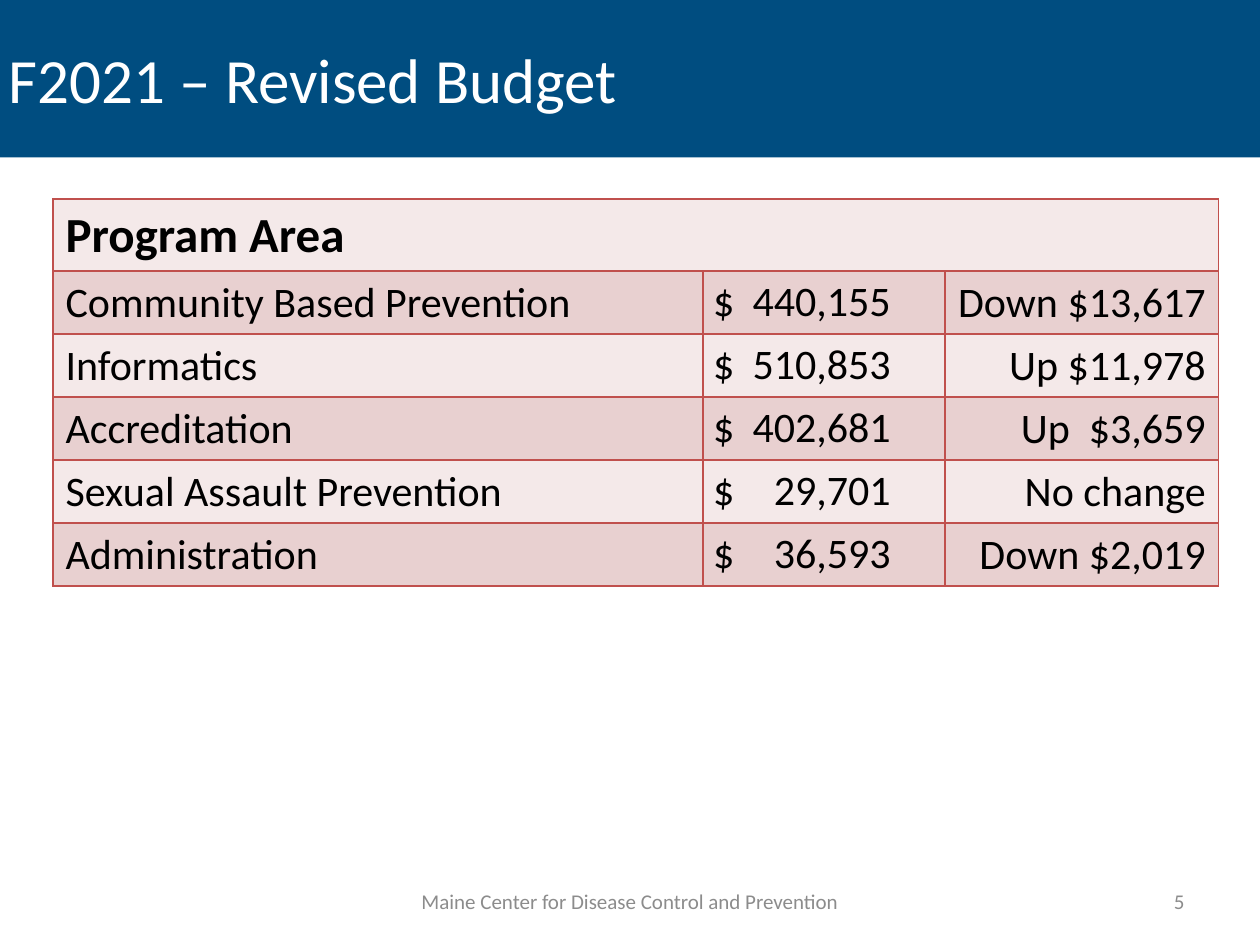
import pptx
import pptx.util
import pptx.dml.color
import pptx.enum.text
import pptx.oxml
import pptx.oxml.ns
from lxml import etree

Inches = pptx.util.Inches
Pt = pptx.util.Pt
ALIGN = pptx.enum.text.PP_ALIGN
MIDDLE = pptx.enum.text.MSO_ANCHOR.MIDDLE
TOP = pptx.enum.text.MSO_ANCHOR.TOP

COLUMN_WIDTHS = (5.16, 1.92, 2.17)
HEADER_HEIGHT = 0.57
ROW_HEIGHT = 0.5
BAND_FILLS = ("F4E9E9", "E8D0D0")
BUDGET = (
    ("Community Based Prevention", "440,155", "Down $13,617"),
    ("Informatics", "510,853", "Up $11,978"),
    ("Accreditation", "402,681", "Up  $3,659"),
    ("Sexual Assault Prevention", "29,701", "No change"),
    ("Administration", "36,593", "Down $2,019"),
)


def color(hex_value):
    return pptx.dml.color.RGBColor.from_string(hex_value)


def write(frame, text, size, hex_value, align=ALIGN.LEFT, bold=False):
    frame.text = text
    frame.word_wrap = True
    paragraph = frame.paragraphs[0]
    paragraph.alignment = align
    font = paragraph.font
    font.name = "Calibri"
    font.size = Pt(size)
    font.bold = bold
    font.color.rgb = color(hex_value)
    return paragraph


def add_title(slide, text):
    title = slide.shapes.title
    title.left, title.top = Inches(-0.03), Inches(0)
    title.width, title.height = Inches(10.03), Inches(1.25)
    title.fill.solid()
    title.fill.fore_color.rgb = color("004D80")
    write(title.text_frame, text, 36, "FFFFFF")
    title.text_frame.vertical_anchor = MIDDLE


def add_footer(slide, left, width, text, align):
    footer = slide.shapes.add_textbox(
        Inches(left), Inches(6.95), Inches(width), Inches(0.4))
    write(footer.text_frame, text, 12, "8C8C8C", align)
    footer.text_frame.vertical_anchor = MIDDLE


def add_borders(cell, hex_value, width):
    properties = cell._tc.get_or_add_tcPr()
    for side in ("a:lnL", "a:lnR", "a:lnT", "a:lnB"):
        line = etree.SubElement(
            properties, pptx.oxml.ns.qn(side), w=str(Pt(width)))
        fill = etree.SubElement(line, pptx.oxml.ns.qn("a:solidFill"))
        etree.SubElement(fill, pptx.oxml.ns.qn("a:srgbClr"), val=hex_value)


def add_right_tab(paragraph, position):
    properties = paragraph._p.get_or_add_pPr()
    stops = pptx.oxml.parse_xml(
        f'<a:tabLst {pptx.oxml.ns.nsdecls("a")}>'
        f'<a:tab pos="{Inches(position)}" algn="r"/></a:tabLst>')
    properties.find(pptx.oxml.ns.qn("a:defRPr")).addprevious(stops)


def fill_budget_row(table, row, area, amount, change):
    write(table.cell(row, 0).text_frame, area, 24, "000000")
    amount_cell = table.cell(row, 1)
    amount_line = write(amount_cell.text_frame, f"$\t{amount}", 24, "000000")
    add_right_tab(amount_line, 1.41)
    amount_cell.margin_left = Inches(0.08)
    amount_cell.margin_top = amount_cell.margin_bottom = Inches(0.01)
    change_cell = table.cell(row, 2)
    write(change_cell.text_frame, change, 24, "000000", ALIGN.RIGHT)
    change_cell.margin_left = Inches(0.05)
    amount_cell.vertical_anchor = change_cell.vertical_anchor = MIDDLE


def add_budget_table(slide):
    height = HEADER_HEIGHT + ROW_HEIGHT * len(BUDGET)
    table = slide.shapes.add_table(
        len(BUDGET) + 1, len(COLUMN_WIDTHS), Inches(0.42), Inches(1.58),
        Inches(sum(COLUMN_WIDTHS)), Inches(height)).table
    for column, width in zip(table.columns, COLUMN_WIDTHS):
        column.width = Inches(width)
    for index, row in enumerate(table.rows):
        row.height = Inches(ROW_HEIGHT if index else HEADER_HEIGHT)
        for cell in row.cells:
            add_borders(cell, "C0504D", 1)
            cell.fill.solid()
            cell.fill.fore_color.rgb = color(BAND_FILLS[index % 2])
    header = table.cell(0, 0)
    header.merge(table.cell(0, len(COLUMN_WIDTHS) - 1))
    write(header.text_frame, "Program Area", 28, "000000", bold=True)
    header.vertical_anchor = TOP
    for row, entry in enumerate(BUDGET, start=1):
        fill_budget_row(table, row, *entry)


def main():
    deck = pptx.Presentation()
    deck.slide_width, deck.slide_height = Inches(10), Inches(7.5)
    slide = deck.slides.add_slide(deck.slide_layouts[5])
    add_title(slide, "F2021 – Revised Budget")
    add_footer(slide, 3, 4, "Maine Center for Disease Control and Prevention",
               ALIGN.CENTER)
    add_footer(slide, 7.17, 2.33, "5", ALIGN.RIGHT)
    add_budget_table(slide)
    deck.save("out.pptx")


if __name__ == "__main__":
    main()
